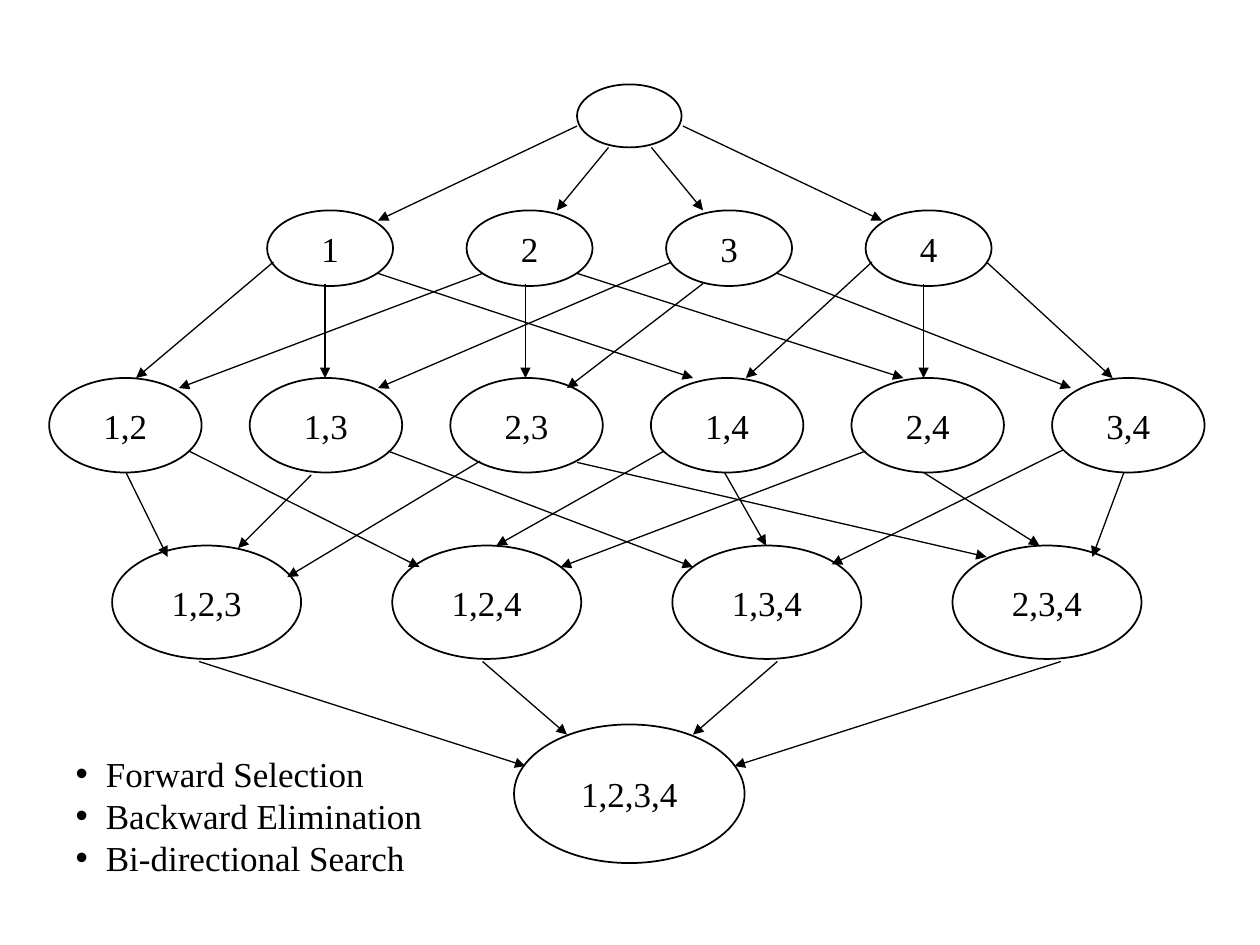
from lxml import etree
from pptx import Presentation
from pptx import util as u
from pptx.dml.color import RGBColor
from pptx.enum import shapes, text
from pptx.oxml.ns import qn

BLACK = RGBColor(0, 0, 0)
FONT = "Times New Roman"
SCALE = 9144  # EMU per px, 100 px to the inch

# top, width, height, first left, last left, labels
LEVELS = [
    (67, 83, 50, 458, 458, [""]),
    (167, 100, 60, 212, 687, ["1", "2", "3", "4"]),
    (300, 121, 75, 39, 835, ["1,2", "1,3", "2,3", "1,4", "2,4", "3,4"]),
    (433, 150, 90, 89, 756, ["1,2,3", "1,2,4", "1,3,4", "2,3,4"]),
    (575, 183, 110, 408, 408, ["1,2,3,4"]),
]

# Arrows on the left half, repeated mirrored on the right half
MIRRORED_ARROWS = [
    (458, 100, 300, 175), (483, 117, 442, 167),
    (158, 525, 417, 608), (383, 525, 450, 583),
]
SINGLES_TO_PAIRS = [
    (217, 208, 108, 300), (258, 225, 258, 300), (300, 217, 550, 300),
    (383, 217, 142, 308), (417, 225, 417, 300), (458, 217, 717, 300),
    (533, 208, 300, 308), (558, 225, 450, 308), (617, 217, 850, 308),
    (692, 208, 592, 300), (733, 225, 733, 300), (783, 208, 883, 300),
]
PAIRS_TO_TRIPLES = [
    (100, 375, 133, 442), (150, 358, 333, 450),
    (247, 377, 189, 435), (308, 358, 550, 450),
    (381, 366, 228, 458), (458, 367, 783, 442),
    (527, 358, 394, 433), (575, 375, 608, 433),
    (687, 358, 445, 450), (733, 375, 825, 433),
    (844, 357, 660, 448), (892, 375, 867, 442),
]
STRATEGIES = ["Forward Selection", "Backward Elimination", "Bi-directional Search"]


def px(length):
    return u.Emu(round(length * SCALE))


class LatticeSlide:
    def __init__(self, deck):
        self.width = 1000
        deck.slide_width, deck.slide_height = px(self.width), px(750)
        self.page = deck.slides.add_slide(deck.slide_layouts[1])
        title = self.page.shapes.title.element
        title.getparent().remove(title)

    def add_words(self, para, words):
        span = para.add_run()
        span.text = words
        span.font.name = FONT
        span.font.size = u.Pt(20)
        span.font.color.rgb = BLACK

    def arrow(self, x1, y1, x2, y2):
        connector = self.page.shapes.add_connector(
            shapes.MSO_CONNECTOR.STRAIGHT, px(x1), px(y1), px(x2), px(y2))
        connector.line.color.rgb = BLACK
        connector.line.width = u.Pt(0.75)
        properties = connector.element.spPr
        etree.SubElement(properties.find(qn("a:ln")), qn("a:tailEnd"), type="triangle")
        etree.SubElement(properties, qn("a:effectLst"))

    def mirrored_arrows(self, x1, y1, x2, y2):
        self.arrow(x1, y1, x2, y2)
        self.arrow(self.width - x1, y1, self.width - x2, y2)

    def node(self, left, top, width, height, label):
        oval = self.page.shapes.add_shape(
            shapes.MSO_SHAPE.OVAL, px(left), px(top), px(width), px(height))
        oval.shadow.inherit = False
        oval.fill.background()
        oval.line.color.rgb = BLACK
        oval.line.width = u.Pt(1)
        if label:
            frame = oval.text_frame
            frame.word_wrap = False
            frame.vertical_anchor = text.MSO_ANCHOR.MIDDLE
            para = frame.paragraphs[0]
            para.alignment = text.PP_ALIGN.CENTER
            self.add_words(para, label)

    def level(self, top, width, height, first, last, labels):
        """Draw one row of evenly spaced nodes."""
        step = (last - first) / max(len(labels) - 1, 1)
        for index, label in enumerate(labels):
            self.node(first + index * step, top, width, height, label)

    def bullets(self, left, top, width, height, items):
        box = self.page.placeholders[1]
        box.left, box.top, box.width, box.height = map(px, (left, top, width, height))
        frame = box.text_frame
        frame.word_wrap = True
        frame.auto_size = text.MSO_AUTO_SIZE.SHAPE_TO_FIT_TEXT
        frame.vertical_anchor = text.MSO_ANCHOR.TOP
        for index, item in enumerate(items):
            para = frame.add_paragraph() if index else frame.paragraphs[0]
            para.space_before = u.Pt(0)
            para.line_spacing = u.Pt(24)
            properties = para._p.get_or_add_pPr()
            properties.set("marL", str(px(24)))
            properties.set("indent", str(-px(24)))
            self.add_words(para, item)


def main():
    deck = Presentation()
    lattice = LatticeSlide(deck)
    for ends in MIRRORED_ARROWS:
        lattice.mirrored_arrows(*ends)
    for ends in SINGLES_TO_PAIRS + PAIRS_TO_TRIPLES:
        lattice.arrow(*ends)
    for row in LEVELS:
        lattice.level(*row)
    lattice.bullets(50, 592, 308, 110, STRATEGIES)
    deck.save("out.pptx")


if __name__ == "__main__":
    main()
